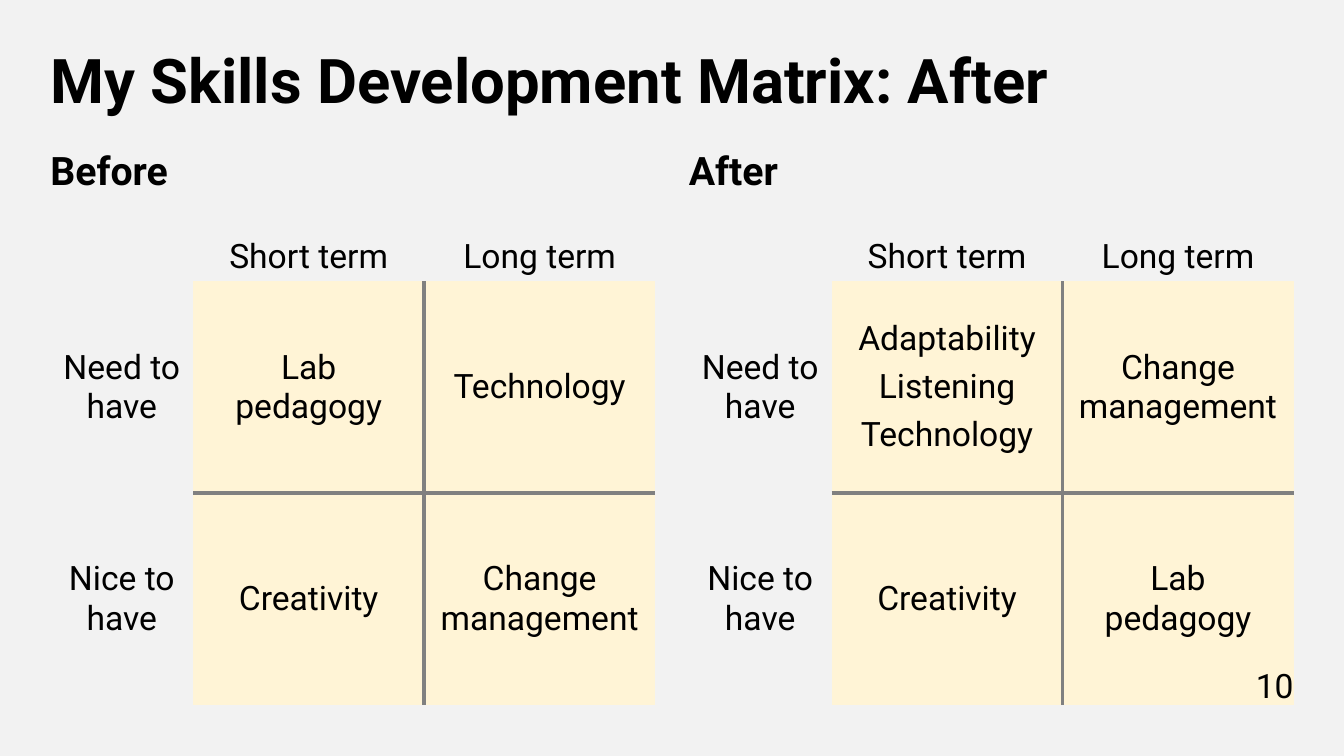
from dataclasses import dataclass

from lxml import etree
from pptx import Presentation
from pptx.dml.color import RGBColor
from pptx.enum.text import MSO_ANCHOR, MSO_AUTO_SIZE, PP_ALIGN
from pptx.oxml.ns import qn
from pptx.util import Pt

LEFT, CENTER, RIGHT = PP_ALIGN.LEFT, PP_ALIGN.CENTER, PP_ALIGN.RIGHT
TOP, MIDDLE = MSO_ANCHOR.TOP, MSO_ANCHOR.MIDDLE
NO_AUTOFIT = MSO_AUTO_SIZE.NONE
COMPARISON_LAYOUT = 4
PLAIN_TABLE_STYLE = "{2D5ABB26-0587-4C30-8999-92F81FD0307C}"


@dataclass(frozen=True)
class Theme:
    font: str = "Roboto"
    background: str = "F2F2F2"
    text: str = "000000"
    quadrant: str = "FFF4D6"
    divider: str = "808080"
    title_size: int = 44
    heading_size: int = 28
    text_size: int = 24
    divider_width: int = 3


class SlideBuilder:
    def __init__(self, slide, theme):
        self.slide = slide
        self.theme = theme
        fill = slide.background.fill
        fill.solid()
        fill.fore_color.rgb = RGBColor.from_string(theme.background)

    def format_paragraph(self, paragraph, size, bold=False, **layout):
        for name, value in layout.items():
            setattr(paragraph, name, value)
        font_format = {"name": self.theme.font, "size": Pt(size), "bold": bold}
        for run in paragraph.runs:
            for name, value in font_format.items():
                setattr(run.font, name, value)
            run.font.color.rgb = RGBColor.from_string(self.theme.text)

    def place(self, shape, left, top, width, height):
        box = {"left": left, "top": top, "width": width, "height": height}
        for name, value in box.items():
            setattr(shape, name, Pt(value))

    def fill_frame(self, shape, text, size, anchor=TOP, **layout):
        frame = shape.text_frame
        frame.text = text
        frame_format = {
            "margin_left": 0, "margin_top": 0, "margin_right": 0, "margin_bottom": 0,
            "word_wrap": True, "auto_size": NO_AUTOFIT, "vertical_anchor": anchor,
        }
        for name, value in frame_format.items():
            setattr(frame, name, value)
        self.format_paragraph(frame.paragraphs[0], size, **layout)

    def title(self, text, *box):
        shape = self.slide.shapes.title
        self.place(shape, *box)
        self.fill_frame(shape, text, self.theme.title_size, bold=True,
                        alignment=LEFT, line_spacing=0.9)

    def heading(self, index, text, *box):
        shape = self.slide.placeholders[index]
        self.place(shape, *box)
        self.fill_frame(shape, text, self.theme.heading_size, bold=True,
                        alignment=LEFT, line_spacing=0.9, space_before=Pt(10))

    def page_number(self, text, *box):
        shape = self.slide.shapes.add_textbox(*map(Pt, box))
        self.fill_frame(shape, text, self.theme.text_size, anchor=MIDDLE, alignment=RIGHT)

    def border(self, cell, side):
        properties = cell._tc.get_or_add_tcPr()
        line = etree.SubElement(properties, qn(f"a:ln{side}"),
                                w=str(Pt(self.theme.divider_width)))
        fill = etree.SubElement(line, qn("a:solidFill"))
        etree.SubElement(fill, qn("a:srgbClr"), val=self.theme.divider)

    def matrix(self, rows, left, top, widths, heights):
        frame = self.slide.shapes.add_table(
            len(rows), len(widths), Pt(left), Pt(top), Pt(sum(widths)), Pt(sum(heights)))
        table = frame.table
        table.first_row = table.horz_banding = False
        table._tbl.tblPr.find(qn("a:tableStyleId")).text = PLAIN_TABLE_STYLE
        for column, width in zip(table.columns, widths):
            column.width = Pt(width)
        for row, height in zip(table.rows, heights):
            row.height = Pt(height)
        for row_index, texts in enumerate(rows):
            for column_index, text in enumerate(texts):
                self.matrix_cell(table.cell(row_index, column_index), text,
                                 row_index, column_index)

    def matrix_cell(self, cell, text, row_index, column_index):
        cell.text = text
        cell.vertical_anchor = MIDDLE
        paragraphs = cell.text_frame.paragraphs
        space_before = Pt(6 if len(paragraphs) > 1 else 0)
        for paragraph in paragraphs:
            self.format_paragraph(paragraph, self.theme.text_size,
                                  alignment=CENTER, space_before=space_before)
        # Quadrants are filled and share the inner cross of dividers
        if row_index and column_index:
            self.border(cell, "R" if column_index == 1 else "L")
            self.border(cell, "B" if row_index == 1 else "T")
            cell.fill.solid()
            cell.fill.fore_color.rgb = RGBColor.from_string(self.theme.quadrant)
        else:
            cell.fill.background()

    def remove_empty_placeholders(self):
        for shape in list(self.slide.placeholders):
            if not shape.text_frame.text:
                shape._element.getparent().remove(shape._element)


# Each side: heading placeholder, heading, then need-to-have and nice-to-have skills
SIDES = [
    (1, "Before", ["Lab\vpedagogy", "Technology"], ["Creativity", "Change management"]),
    (3, "After", ["Adaptability\nListening\nTechnology", "Change management"],
     ["Creativity", "Lab\vpedagogy"]),
]
MARGIN, SIDE_STEP, SIDE_WIDTH = 36, 456, 432
COLUMN_WIDTHS = [102, 165, 165]
ROW_HEIGHTS = [35.3, 151.2, 151.2]


def main():
    presentation = Presentation()
    presentation.slide_width, presentation.slide_height = Pt(960), Pt(540)
    slide = presentation.slides.add_slide(presentation.slide_layouts[COMPARISON_LAYOUT])
    builder = SlideBuilder(slide, Theme())

    # Title
    builder.title("My Skills Development Matrix: After", MARGIN, 36, 888, 50.4)

    # Before and after matrices
    for position, (placeholder, heading, need, nice) in enumerate(SIDES):
        left = MARGIN + position * SIDE_STEP
        builder.heading(placeholder, heading, left, 108, SIDE_WIDTH, 36)
        rows = [["", "Short term", "Long term"],
                ["Need to have", *need],
                ["Nice to have", *nice]]
        builder.matrix(rows, left, 165.6, COLUMN_WIDTHS, ROW_HEIGHTS)

    # Page number
    builder.page_number("10", 852, 475.2, 72, 28.8)

    builder.remove_empty_placeholders()
    presentation.save("out.pptx")


if __name__ == "__main__":
    main()
